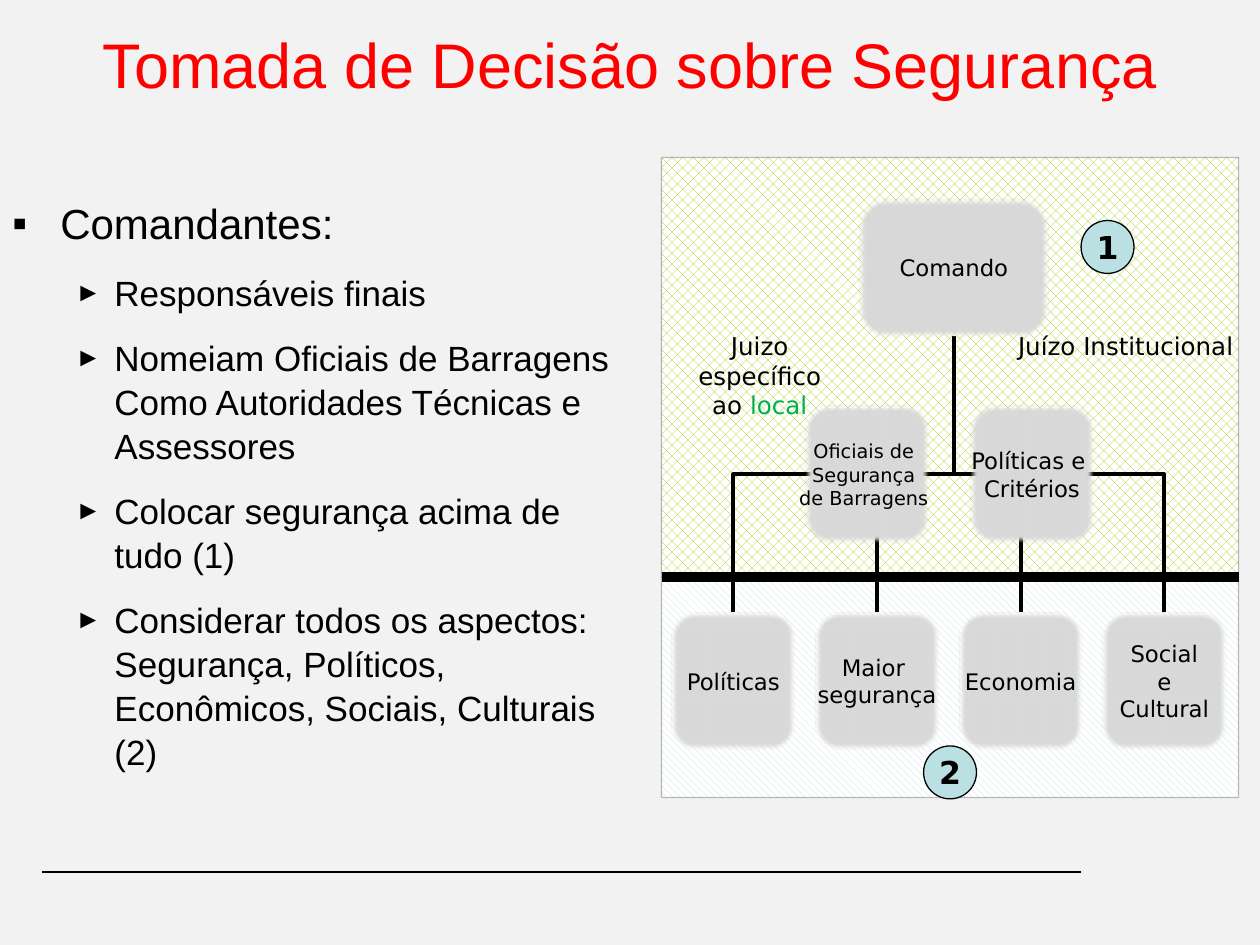
from dataclasses import dataclass
from lxml.etree import SubElement
from pptx import Presentation
from pptx.dml.color import RGBColor
from pptx.enum.dml import MSO_PATTERN_TYPE as Pattern
from pptx.enum.shapes import MSO_CONNECTOR as Link, MSO_SHAPE as Shape
from pptx.enum.text import MSO_ANCHOR as Anchor, PP_ALIGN as Align
from pptx.oxml.ns import qn
from pptx.util import Inches, Pt


@dataclass(frozen=True)
class Theme:
    background: str = "F2F2F2"
    ink: str = "000000"
    title: str = "FF0000"
    accent: str = "00B050"
    node: str = "D9D9D9"
    badge: str = "BBE0E3"
    upper: str = "99CC00"
    paper: str = "FFFFFF"
    text_font: str = "Arial"
    chart_font: str = "DejaVu Sans"
    title_size: int = 36
    heading_size: int = 24
    bullet_size: int = 20
    badge_size: int = 18
    label_size: int = 14
    node_size: int = 13
    small_size: int = 11
    thin: float = 0.75
    branch: float = 2.25
    divider: float = 6


def rgb(value):
    return RGBColor.from_string(value)


class SlideBuilder:
    def __init__(self, slide, theme):
        self.slide = slide
        self.theme = theme
        slide.background.fill.solid()
        slide.background.fill.fore_color.rgb = rgb(theme.background)

    def style(self, para, size, font, color=None, bold=False):
        for span in para.runs:
            span.font.size = Pt(size)
            span.font.name = font
            span.font.bold = bold
            span.font.color.rgb = rgb(color or self.theme.ink)

    def shape(self, kind, left, top, width, height):
        shape = self.slide.shapes.add_shape(
            kind, Inches(left), Inches(top), Inches(width), Inches(height))
        shape.shadow.inherit = False
        shape.line.color.rgb = rgb(self.theme.ink)
        shape.line.width = Pt(self.theme.thin)
        return shape

    def panel(self, left, top, width, height, pattern, color):
        panel = self.shape(Shape.RECTANGLE, left, top, width, height)
        panel.fill.patterned()
        panel.fill.pattern = Pattern.from_xml(pattern)
        panel.fill.fore_color.rgb = rgb(color)
        panel.fill.back_color.rgb = rgb(self.theme.paper)
        outline = panel._element.spPr.find(qn("a:ln"))
        SubElement(outline.find(".//" + qn("a:srgbClr")), qn("a:alpha"), val="25000")

    def label_shape(self, shape, text, fill, size, bold=False):
        shape.fill.solid()
        shape.fill.fore_color.rgb = rgb(fill)
        frame = shape.text_frame
        frame.word_wrap = False
        frame.vertical_anchor = Anchor.MIDDLE
        frame.text = text
        for para in frame.paragraphs:
            para.alignment = Align.CENTER
            self.style(para, size, self.theme.chart_font, bold=bold)
        return frame

    def node(self, text, left, top, width, height, size=None):
        box = self.shape(Shape.ROUNDED_RECTANGLE, left, top, width, height)
        frame = self.label_shape(box, text, self.theme.node, size or self.theme.node_size)
        frame.margin_left = frame.margin_right = 0
        frame.margin_top = frame.margin_bottom = 0
        effects = box._element.spPr.find(qn("a:effectLst"))
        SubElement(effects, qn("a:softEdge"), rad=str(Pt(2.5)))

    def badge(self, text, left, top):
        circle = self.shape(Shape.OVAL, left, top, 0.42, 0.42)
        self.label_shape(circle, text, self.theme.badge, self.theme.badge_size, True)

    def line(self, start, end, weight, kind=Link.STRAIGHT):
        points = [Inches(value) for value in (*start, *end)]
        line = self.slide.shapes.add_connector(kind, *points)
        line.line.color.rgb = rgb(self.theme.ink)
        line.line.width = Pt(weight)
        SubElement(line._element.spPr, qn("a:effectLst"))
        return line

    def side_branch(self, start, end):
        elbow = self.line(start, end, self.theme.branch, Link.ELBOW)
        elbow._element.spPr.find(qn("a:prstGeom")).set("prst", "bentConnector2")

    def upward_branch(self, start, end):
        middle_x, middle_y = (start[0] + end[0]) / 2, (start[1] + end[1]) / 2
        half_rise = (start[1] - end[1]) / 2
        half_run = (start[0] - end[0]) / 2
        elbow = self.line((middle_x - half_rise, middle_y + half_run),
                          (middle_x + half_rise, middle_y - half_run),
                          self.theme.branch, Link.ELBOW)
        elbow._element.spPr.find(qn("a:xfrm")).set("rot", str(270 * 60000))

    def text(self, spans, left, top, width, height, size, font, wrap=True, anchor=Anchor.TOP):
        box = self.slide.shapes.add_textbox(
            Inches(left), Inches(top), Inches(width), Inches(height))
        frame = box.text_frame
        frame.word_wrap = wrap
        frame.vertical_anchor = anchor
        para = frame.paragraphs[0]
        para.alignment = Align.CENTER
        for words, color in spans:
            span = para.add_run()
            span.text = words
        self.style(para, size, font)
        for span, (words, color) in zip(para.runs, spans):
            span.font.color.rgb = rgb(color)

    def bullets(self, heading, items, left, top, width, height):
        box = self.slide.shapes.add_textbox(
            Inches(left), Inches(top), Inches(width), Inches(height))
        frame = box.text_frame
        frame.word_wrap = True
        frame.text = "\n".join([heading, *items])
        for index, para in enumerate(frame.paragraphs):
            margin, hang, mark, scale, size = (
                (0.81, 0.31, "►", 75, self.theme.bullet_size) if index
                else (0.38, 0.38, "▪", 100, self.theme.heading_size))
            para.level = min(index, 1)
            para.line_spacing = 1.05
            if index:
                para.space_before = Pt(12)
            props = para._p.get_or_add_pPr()
            props.set("marL", str(Inches(margin)))
            props.set("indent", str(-Inches(hang)))
            SubElement(props, qn("a:buSzPct"), val=str(scale * 1000))
            SubElement(props, qn("a:buFont"), typeface=self.theme.text_font)
            SubElement(props, qn("a:buChar"), char=mark)
            self.style(para, size, self.theme.text_font)


def main():
    theme = Theme()
    deck = Presentation()
    deck.slide_width, deck.slide_height = Inches(10), Inches(7.5)
    page = SlideBuilder(deck.slides.add_slide(deck.slide_layouts[6]), theme)

    page.line((8.58, 6.92), (0.33, 6.92), theme.thin)
    left, right, split = 5.25, 9.83, 4.58
    page.panel(left, 1.25, right - left, split - 1.25, "pct40", theme.upper)
    page.panel(left, split, right - left, 1.75, "wdDnDiag", theme.badge)

    page.text([("Tomada de Decisão sobre Segurança", theme.title)], 0.5, 0, 9, 1,
              theme.title_size, theme.text_font, anchor=Anchor.MIDDLE)
    page.bullets("Comandantes:", [
        "Responsáveis finais",
        "Nomeiam Oficiais de Barragens Como Autoridades Técnicas e Assessores",
        "Colocar segurança acima de tudo (1)",
        "Considerar todos os aspectos: Segurança, Políticos, Econômicos, Sociais, Culturais (2)",
    ], 0, 1.5, 5.08, 4.37)

    width, height = 0.98, 1.09
    command_top, staff_top, factor_top = 1.58, 3.22, 4.86
    trunk = (7.57, command_top + height)
    officers_left, policy_left = 6.39, 7.7
    factors = ["Políticas", "Maior \nsegurança", "Economia", "Social\ne\nCultural"]
    factor_lefts = [5.33 + 1.14 * index for index in range(len(factors))]

    for side in (policy_left, officers_left + width):
        page.side_branch((side, staff_top + height / 2), trunk)
    for factor_left in factor_lefts:
        page.upward_branch((factor_left + width / 2, factor_top), trunk)

    page.node("Comando", 6.82, command_top, 1.5, height)
    page.node("Oficiais de \nSegurança \nde Barragens ", officers_left, staff_top,
              width, height, theme.small_size)
    page.node("Políticas e \nCritérios", policy_left, staff_top, width, height)
    for name, factor_left in zip(factors, factor_lefts):
        page.node(name, factor_left, factor_top, width, height)

    page.badge("1", 8.58, 1.75)
    page.badge("2", 7.33, 5.92)
    page.text([("Juizo específico ao ", theme.ink), ("local", theme.accent)],
              5.33, 2.58, 1.4, 0.81, theme.label_size, theme.chart_font)
    page.text([("Juízo Institucional", theme.ink)], 7.95, 2.58, 1.97, 0.34,
              theme.label_size, theme.chart_font, wrap=False)
    page.line((left, split), (right, split), theme.divider)
    deck.save("out.pptx")


if __name__ == "__main__":
    main()
